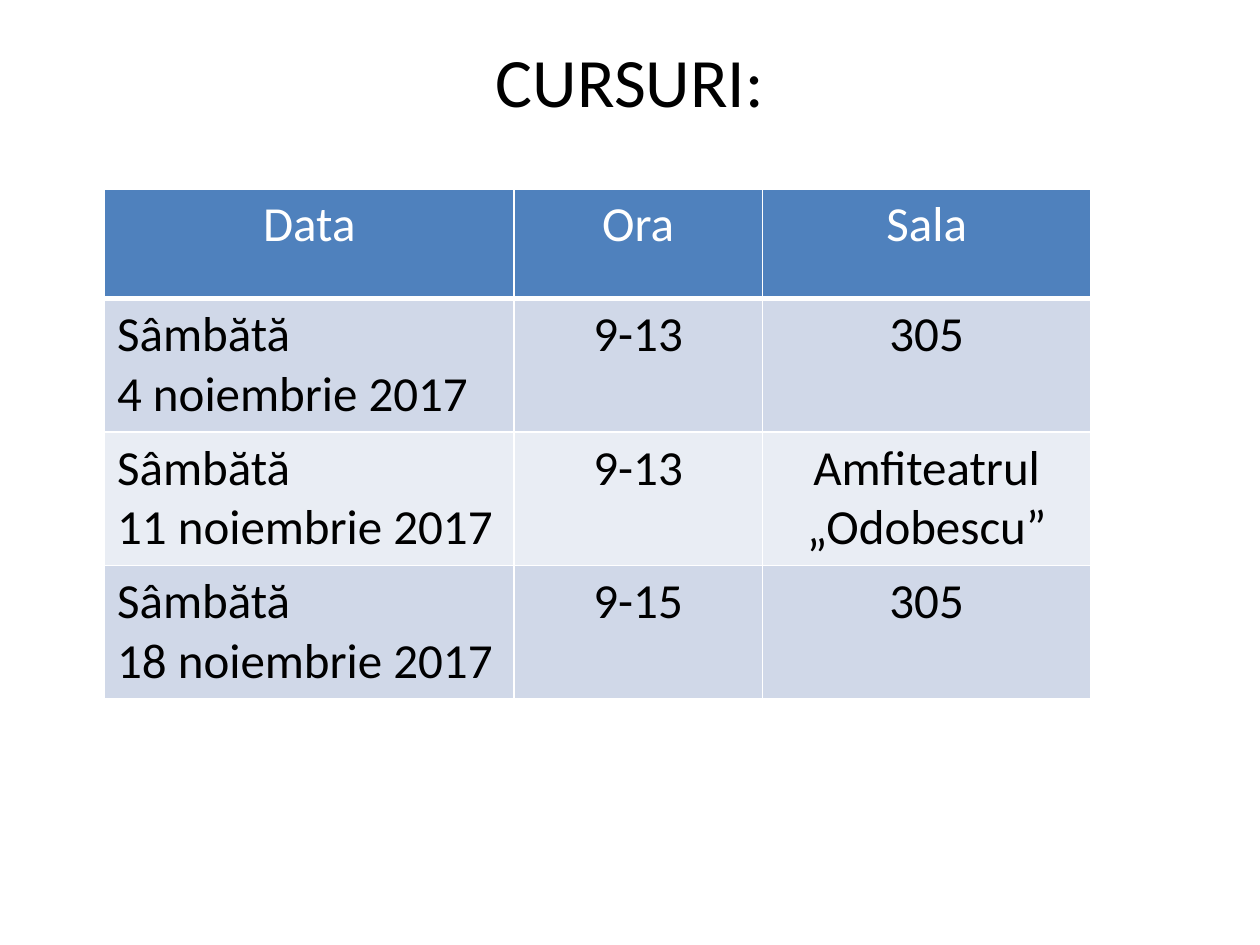
from lxml import etree
from pptx import Presentation
from pptx.dml.color import RGBColor
from pptx.enum import text
from pptx.oxml import ns
from pptx.util import Inches, Pt

# Content
TITLE = "CURSURI:"
ROWS = [
    ("Data", "Ora", "Sala"),
    ("Sâmbătă\n4 noiembrie 2017", "9-13", "305"),
    ("Sâmbătă\n11 noiembrie 2017", "9-13", "Amfiteatrul „Odobescu”"),
    ("Sâmbătă\n18 noiembrie 2017", "9-15", "305"),
]

# Format
FONT = "Calibri"
BLACK = RGBColor(0x00, 0x00, 0x00)
WHITE = RGBColor(0xFF, 0xFF, 0xFF)
HEADER_BLUE = RGBColor(0x4F, 0x81, 0xBD)
BANDS = [RGBColor(0xE9, 0xED, 0xF4), RGBColor(0xD0, 0xD8, 0xE8)]
COLUMN_WIDTHS = [3.25, 1.97, 2.61]
ROW_HEIGHTS = [0.87, 1.06, 1.06, 1.06]
CENTER, LEFT = text.PP_ALIGN.CENTER, text.PP_ALIGN.LEFT


def write(frame, words, size=28, color=BLACK, align=CENTER):
    frame.text = words
    for para in frame.paragraphs:
        para.alignment = align
        for span in para.runs:
            span.font.name = FONT
            span.font.size = Pt(size)
            span.font.bold = False
            span.font.color.rgb = color


def add_borders(cell, bottom_width):
    properties = cell._tc.get_or_add_tcPr()
    widths = {"lnL": 1, "lnR": 1, "lnT": 1, "lnB": bottom_width}
    for place, (side, width) in enumerate(widths.items()):
        line = etree.Element(ns.qn(f"a:{side}"), w=str(Pt(width)))
        fill = etree.SubElement(line, ns.qn("a:solidFill"))
        etree.SubElement(fill, ns.qn("a:srgbClr"), val=str(WHITE))
        properties.insert(place, line)


deck = Presentation()
deck.slide_width, deck.slide_height = Inches(10), Inches(7.5)
page = deck.slides.add_slide(deck.slide_layouts[5])

# Title
title = page.shapes.title
title.left, title.top = Inches(0.5), Inches(0.3)
title.width, title.height = Inches(9), Inches(1.25)
title.text_frame.vertical_anchor = text.MSO_ANCHOR.TOP
title.text_frame.margin_top = 0
write(title.text_frame, TITLE, size=39.6)

# Course table
table = page.shapes.add_table(
    len(ROWS), len(COLUMN_WIDTHS), Inches(0.83), Inches(1.5),
    Inches(sum(COLUMN_WIDTHS)), Inches(sum(ROW_HEIGHTS))).table
for column, width in zip(table.columns, COLUMN_WIDTHS):
    column.width = Inches(width)
for r, (values, height) in enumerate(zip(ROWS, ROW_HEIGHTS)):
    table.rows[r].height = Inches(height)
    header = r == 0
    for c, value in enumerate(values):
        cell = table.cell(r, c)
        cell.fill.solid()
        cell.fill.fore_color.rgb = HEADER_BLUE if header else BANDS[r % 2]
        add_borders(cell, bottom_width=3 if header else 1)
        write(cell.text_frame, value, color=WHITE if header else BLACK,
              align=CENTER if header or c else LEFT)

deck.save("out.pptx")
